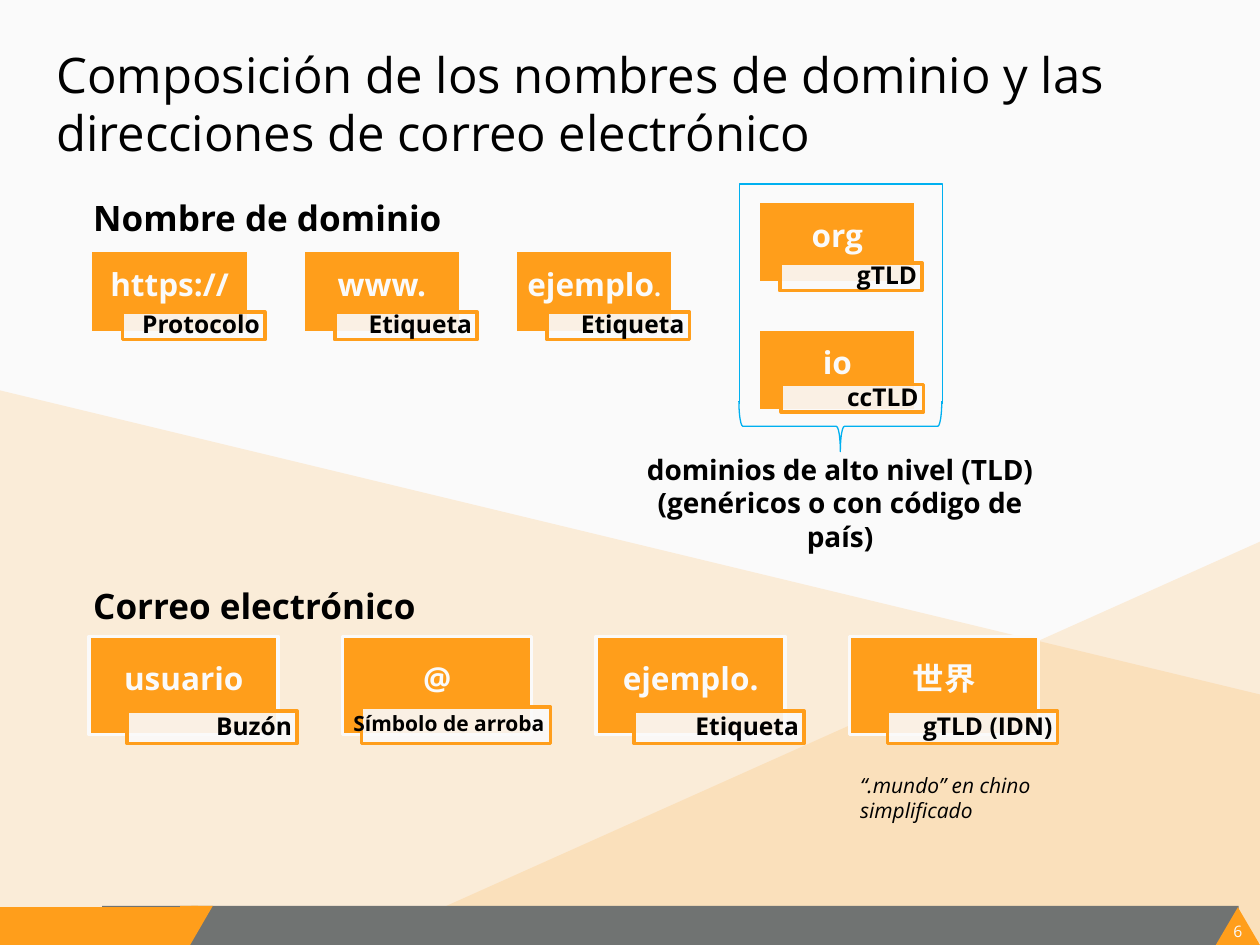
import pptx
import pptx.dml.color
import pptx.enum.shapes
import pptx.enum.text
import pptx.util
from lxml import etree
from pptx.oxml.ns import qn

Cm, Pt = pptx.util.Cm, pptx.util.Pt
SHAPE = pptx.enum.shapes.MSO_SHAPE
ALIGN = pptx.enum.text.PP_ALIGN
ANCHOR = pptx.enum.text.MSO_ANCHOR

ORANGE, GREY, PALE, BLUE, BLACK = "FF9E1B", "707372", "FAFAFA", "00B0F0", "000000"
BOX_INSETS = (0.25, 0.13, 0.25, 0.13)
LABEL_INSETS = (0.1, 0.03, 0.1, 0.03)


def rgb(color):
    return pptx.dml.color.RGBColor.from_string(color)


class SlideBuilder:
    font_name = "Open Sans"

    def __init__(self, slide):
        self.slide = slide
        slide.background.fill.solid()
        slide.background.fill.fore_color.rgb = rgb(PALE)

    def paint(self, shape, fill=None, opacity=100, line=None, line_width=2):
        shape.shadow.inherit = False
        if fill:
            shape.fill.solid()
            shape.fill.fore_color.rgb = rgb(fill)
            if opacity < 100:
                color = shape._element.spPr.find(qn("a:solidFill"))[0]
                etree.SubElement(color, qn("a:alpha"), val=str(opacity * 1000))
        else:
            shape.fill.background()
        if line:
            shape.line.color.rgb = rgb(line)
            shape.line.width = Pt(line_width)
        else:
            shape.line.fill.background()

    def shape(self, kind, left, top, width, height, rotation=0, adjust=None, **paint):
        shape = self.slide.shapes.add_shape(kind, Cm(left), Cm(top), Cm(width), Cm(height))
        shape.rotation = rotation
        if adjust is not None:
            shape.adjustments[0] = adjust
        self.paint(shape, **paint)
        return shape

    def polygon(self, points, **paint):
        corners = [(Cm(x), Cm(y)) for x, y in points]
        builder = self.slide.shapes.build_freeform(*corners[0])
        builder.add_line_segments(corners[1:], close=True)
        self.paint(builder.convert_to_shape(), **paint)

    def line(self, x1, y1, x2, y2, color, width=0.75):
        connector = self.slide.shapes.add_connector(
            pptx.enum.shapes.MSO_CONNECTOR.STRAIGHT, Cm(x1), Cm(y1), Cm(x2), Cm(y2))
        connector.line.color.rgb = rgb(color)
        connector.line.width = Pt(width)
        etree.SubElement(connector._element.spPr, qn("a:effectLst"))

    def set_text(self, shape, text, size, color=BLACK, bold=False, italic=False,
                 align=ALIGN.LEFT, anchor=ANCHOR.TOP, insets=BOX_INSETS, spacing=None):
        """Fill the shape with text, one paragraph per line."""
        frame = shape.text_frame
        frame.word_wrap = True
        frame.vertical_anchor = anchor
        (frame.margin_left, frame.margin_top,
         frame.margin_right, frame.margin_bottom) = map(Cm, insets)
        frame.text = text
        for paragraph in frame.paragraphs:
            paragraph.alignment = align
            if spacing:
                paragraph.line_spacing = spacing
            font = paragraph.font
            font.name, font.size, font.color.rgb = self.font_name, Pt(size), rgb(color)
            font.bold, font.italic = bold, italic

    def text(self, left, top, width, height, text, size, **style):
        box = self.slide.shapes.add_textbox(Cm(left), Cm(top), Cm(width), Cm(height))
        self.set_text(box, text, size, **style)

    def card(self, left, top, width, height, text):
        """Orange block; its bottom inset leaves room for the label."""
        card = self.shape(SHAPE.RECTANGLE, left, top, width, height, fill=ORANGE, line=PALE)
        self.set_text(card, text, 18, color=PALE, bold=True, align=ALIGN.CENTER,
                      anchor=ANCHOR.MIDDLE, insets=(0.03, 0.03, 0.03, 0.25), spacing=0.9)
        return card

    def label(self, left, top, width, height, text=""):
        label = self.shape(SHAPE.RECTANGLE, left, top, width, height,
                           fill=PALE, opacity=90, line=ORANGE)
        if text:
            self.set_text(label, text, 14, bold=True, align=ALIGN.RIGHT,
                          anchor=ANCHOR.MIDDLE, insets=LABEL_INSETS, spacing=0.9)


def draw_backdrop(page):
    page.polygon([(0, 7.87), (25.4, 14), (25.4, 19), (0, 19.05)], fill=ORANGE, opacity=15)
    page.polygon([(25.4, 10.92), (25.4, 19.05), (7.24, 19.05)], fill=ORANGE, opacity=15)
    page.shape(SHAPE.RECTANGLE, 2.06, 18.26, 22.91, 0.79, fill=GREY)
    page.shape(SHAPE.RECTANGLE, 0, 18.29, 3.81, 0.76, fill=ORANGE)
    page.shape(SHAPE.ISOSCELES_TRIANGLE, 24.51, 18.29, 0.89, 0.76, fill=ORANGE)
    page.text(24.74, 18.59, 0.43, 0.38, "6", 9, color=PALE, align=ALIGN.CENTER,
              insets=(0, 0, 0, 0))
    page.shape(SHAPE.PARALLELOGRAM, 3.4, 18.26, 0.89, 0.79, rotation=180, adjust=0.58,
               fill=ORANGE)
    page.shape(SHAPE.RECTANGLE, 3.63, 18.26, 0.36, 0.33, fill=ORANGE)


def draw_domain(page):
    page.text(1.63, 3.84, 8.43, 1.12, "Nombre de dominio", 20, bold=True)
    parts = [
        (1.83, 5.05, "https://", 0.64, 1.24, "Protocolo"),
        (6.11, 5.05, "www.", 0.64, 1.24, "Etiqueta"),
        (10.39, 5.05, "ejemplo", 0.64, 1.24, "Etiqueta"),
        (15.29, 4.06, "org", 0.43, 1.24, "gTLD"),
        (15.29, 6.63, "io", 0.46, 1.12, "ccTLD"),
    ]
    for left, top, part, shift, drop, role in parts:
        card = page.card(left, top, 3.18, 1.65, part)
        if part == "ejemplo":
            dot = card.text_frame.paragraphs[0].add_run()
            dot.text = "."
            dot.font.size = Pt(14)
        page.label(left + shift, top + drop, 2.87, 0.56, role)


def draw_tld_bracket(page):
    page.text(12.34, 8.99, 9.19, 1.63,
              "dominios de alto nivel (TLD)\n(genéricos o con código de país)",
              16, bold=True, align=ALIGN.CENTER)
    page.shape(SHAPE.RIGHT_BRACE, 16.43, 6.55, 1.02, 4.09, rotation=90, adjust=0.08,
               line=BLUE, line_width=0.75)
    page.shape(SHAPE.RIGHT_BRACKET, 16.61, 2.01, 0.69, 4.09, rotation=270, adjust=0,
               line=BLUE, line_width=0.75)
    for side in (14.91, 19):
        page.line(side, 4.37, side, 8.14, BLUE)


def draw_email(page):
    page.text(1.63, 11.66, 7.24, 1.12, "Correo electrónico", 20, bold=True)
    top, pitch = 12.83, 5.11
    parts = [("usuario", "Buzón"), ("@", "Símbolo de arroba"),
             ("ejemplo.", "Etiqueta"), ("世界", "gTLD (IDN)")]
    for column, (part, role) in enumerate(parts):
        left = 1.8 + column * pitch
        page.card(left, top, 3.81, 1.98, part)
        if part == "@":
            page.label(left + 0.38, top + 1.42, 3.81, 0.74)
            page.text(left, top + 1.55, 4.17, 0.66, role, 12, bold=True, align=ALIGN.RIGHT,
                      anchor=ANCHOR.MIDDLE, insets=LABEL_INSETS, spacing=Pt(7.4))
        else:
            page.label(left + 0.76, top + 1.5, 3.43, 0.66, role)
    page.text(17.09, 15.44, 6.22, 0.76, "“.mundo” en chino simplificado", 12, italic=True)


def main():
    deck = pptx.Presentation()
    deck.slide_width, deck.slide_height = Cm(25.4), Cm(19.05)
    page = SlideBuilder(deck.slides.add_slide(deck.slide_layouts[6]))
    draw_backdrop(page)
    page.text(0.89, 0.76, 24, 3.18, "Composición de los nombres de dominio y las "
              "direcciones de correo electrónico", 28)
    draw_domain(page)
    draw_tld_bracket(page)
    draw_email(page)
    deck.save("out.pptx")


if __name__ == "__main__":
    main()
